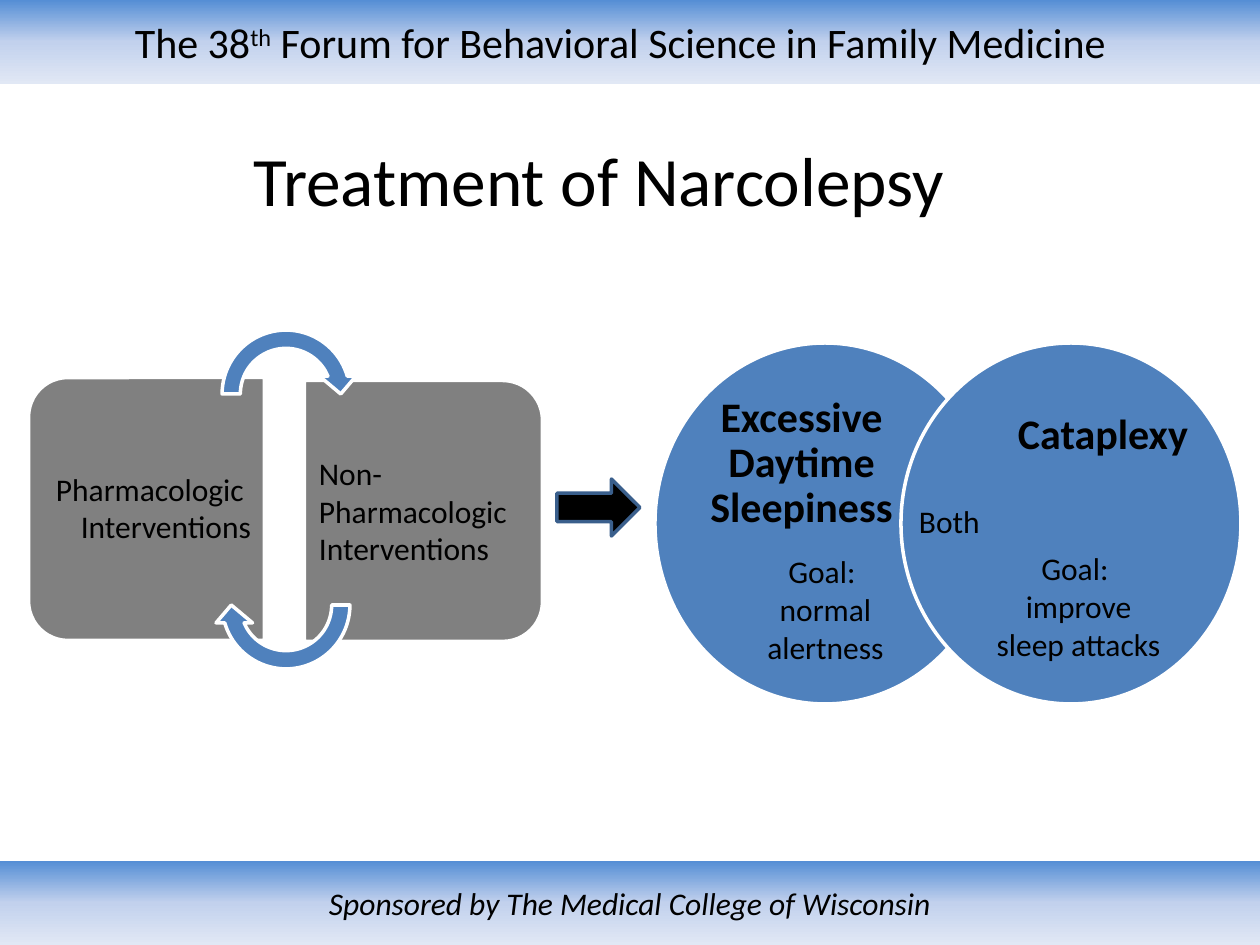
from copy import deepcopy
from pptx import Presentation
from pptx.dml.color import RGBColor
from pptx.enum.shapes import MSO_SHAPE as Kind
from pptx.enum.text import MSO_ANCHOR as Anchor, PP_ALIGN as Align
from pptx.oxml.ns import qn
from pptx.util import Pt

PX = 914400 // 126
BLUE, GREY, WHITE = "4F81BD", "808080", "FFFFFF"

deck = Presentation()
deck.slide_width, deck.slide_height = 1260 * PX, 945 * PX
slide = deck.slides.add_slide(deck.slide_layouts[5])
shapes = slide.shapes


def write(shape, *lines, size=18, bold=False, italic=False, align=Align.CENTER,
          anchor=Anchor.MIDDLE, pad=(13, 6, 13, 6), space=1.0):
    frame = shape.text_frame
    frame.word_wrap = True
    frame.vertical_anchor = anchor
    frame.margin_left, frame.margin_top, frame.margin_right, frame.margin_bottom = [
        n * PX for n in pad]
    for i, line in enumerate(lines):
        para = frame.add_paragraph() if i else frame.paragraphs[0]
        para.alignment = align
        para.line_spacing = space
        for part in line.split("|"):
            run = para.add_run()
            run.text = part.lstrip("^")
            font = run.font
            font.name, font.size = "Calibri", Pt(size)
            font.bold, font.italic = bold, italic
            font.color.rgb = RGBColor.from_string("000000")
            if part.startswith("^"):
                run._r.get_or_add_rPr().set("baseline", "30000")


def draw(kind, box, fill, edge=None, turn=0, adj=()):
    shape = shapes.add_shape(kind, *[n * PX for n in box])
    shape.shadow.inherit = False
    shape.rotation = turn
    for i, value in enumerate(adj):
        shape.adjustments[i] = value
    shape.fill.solid()
    shape.fill.fore_color.rgb = RGBColor.from_string(fill)
    if edge:
        shape.line.color.rgb = RGBColor.from_string(edge)
        shape.line.width = Pt(2)
    else:
        shape.line.fill.background()
    return shape


bands = []
for top in (0, 861):
    band = draw(Kind.RECTANGLE, (0, top, 1260, 84), WHITE)
    band.fill.gradient()
    band.fill.gradient_angle = 270
    stops = band._element.spPr.find(".//" + qn("a:gsLst"))
    stops.insert(1, deepcopy(stops[0]))
    shades = (0, "558ED5"), (0.5, "C2D1ED"), (1, "E1E8F5")
    for stop, (spot, shade) in zip(band.fill.gradient_stops, shades):
        stop.position = spot
        stop.color.rgb = RGBColor.from_string(shade)
    bands.append(band)
write(bands[0], "The 38|^th| Forum for Behavioral Science in Family Medicine",
      size=24, pad=(13, 6, 32, 6))
write(bands[1], "Sponsored by The Medical College of Wisconsin", italic=True)

title = shapes.title
title.left, title.top, title.width, title.height = [n * PX for n in (32, 132, 1134, 94)]
write(title, "Treatment of Narcolepsy", size=39.6)

for box, turn in (((15, 391, 263, 236), 270), ((293, 392, 261, 238), 90)):
    draw(Kind.ROUND_2_SAME_RECTANGLE, box, GREY, WHITE, turn, (0.167, 0))
for top, turn in ((321, 0), (532, 180)):
    draw(Kind.CIRCULAR_ARROW, (213, top, 146, 146), BLUE, WHITE, turn,
         (0.125, 11.423, 204.577, 108, 0.125))
draw(Kind.RIGHT_ARROW, (557, 479, 83, 57), "000000", "3A5F8C")
for left in (655, 901):
    draw(Kind.OVAL, (left, 343, 340, 361), BLUE, WHITE)

head = dict(size=24, bold=True, space=0.9)
goal = dict(anchor=Anchor.TOP)
labels = [
    ((42, 387, 223, 241), ["Pharmacologic ", "Interventions"],
     dict(align=Align.RIGHT, pad=(9, 15, 14, 15))),
    ((305, 392, 227, 237), ["Non-Pharmacologic", "Interventions"],
     dict(align=Align.LEFT, pad=(14, 15, 9, 15))),
    ((692, 389, 219, 150), ["Excessive Daytime Sleepiness"], head),
    ((1005, 407, 219, 58), ["Cataplexy"], dict(head, align=Align.LEFT)),
    ((906, 496, 92, 50), ["Both"], dict(align=Align.LEFT)),
    ((980, 543, 197, 154), ["Goal: ", "improve sleep attacks"], goal),
    ((731, 546, 189, 214), ["Goal: ", "normal alertness"], goal),
]
for box, lines, style in labels:
    write(shapes.add_textbox(*[n * PX for n in box]), *lines, **style)

deck.save("out.pptx")
